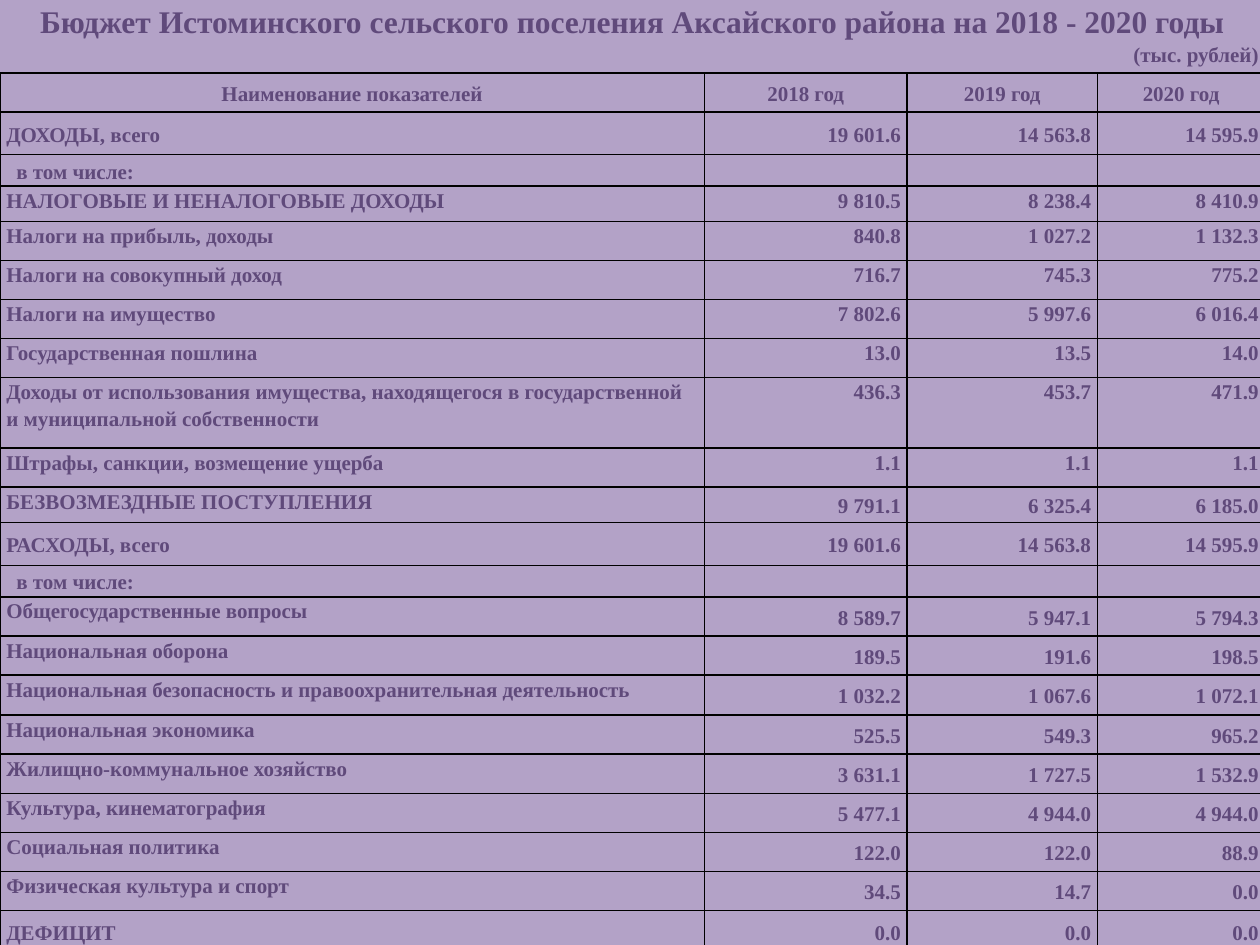
import pptx
import pptx.util
import pptx.dml.color
import pptx.enum.text
import lxml.etree
from pptx.util import Inches
from pptx.oxml.ns import qn

LILAC = pptx.dml.color.RGBColor(0xB3, 0xA2, 0xC7)
PURPLE = pptx.dml.color.RGBColor(0x60, 0x4A, 0x7B)
BLACK = pptx.dml.color.RGBColor(0, 0, 0)
ALIGN = pptx.enum.text.PP_ALIGN
ANCHOR = pptx.enum.text.MSO_ANCHOR

COLUMN_WIDTHS = [5.59, 1.61, 1.51, 1.33]
BUDGET = [
    (0.29, "Бюджет Истоминского сельского поселения Аксайского района на 2018 - 2020 годы", "", "", ""),
    (0.26, "", "", "", "(тыс. рублей)"),
    (0.31, "Наименование показателей", "2018 год", "2019 год", "2020 год"),
    (0.34, "ДОХОДЫ, всего", "19 601.6", "14 563.8", "14 595.9"),
    (0.25, "в том числе:", "", "", ""),
    (0.28, "НАЛОГОВЫЕ И НЕНАЛОГОВЫЕ ДОХОДЫ", "9 810.5", "8 238.4", "8 410.9"),
    (0.31, "Налоги на прибыль, доходы", "840.8", "1 027.2", "1 132.3"),
    (0.31, "Налоги на совокупный доход", "716.7", "745.3", "775.2"),
    (0.31, "Налоги на имущество", "7 802.6", "5 997.6", "6 016.4"),
    (0.31, "Государственная пошлина", "13.0", "13.5", "14.0"),
    (0.56, "Доходы от использования имущества, находящегося в государственной и муниципальной собственности",
     "436.3", "453.7", "471.9"),
    (0.31, "Штрафы, санкции, возмещение ущерба", "1.1", "1.1", "1.1"),
    (0.28, "БЕЗВОЗМЕЗДНЫЕ ПОСТУПЛЕНИЯ", "9 791.1", "6 325.4", "6 185.0"),
    (0.34, "РАСХОДЫ, всего", "19 601.6", "14 563.8", "14 595.9"),
    (0.25, "в том числе:", "", "", ""),
    (0.31, "Общегосударственные вопросы", "8 589.7", "5 947.1", "5 794.3"),
    (0.31, "Национальная оборона", "189.5", "191.6", "198.5"),
    (0.32, "Национальная безопасность и правоохранительная деятельность", "1 032.2", "1 067.6", "1 072.1"),
    (0.31, "Национальная экономика", "525.5", "549.3", "965.2"),
    (0.31, "Жилищно-коммунальное хозяйство", "3 631.1", "1 727.5", "1 532.9"),
    (0.31, "Культура, кинематография", "5 477.1", "4 944.0", "4 944.0"),
    (0.31, "Социальная политика", "122.0", "122.0", "88.9"),
    (0.31, "Физическая культура и спорт", "34.5", "14.7", "0.0"),
    (0.34, "ДЕФИЦИТ", "0.0", "0.0", "0.0"),
]
TITLE_ROW, UNIT_ROW, HEADER_ROW = 0, 1, 2
SUBHEADING_ROWS = {4, 14}
MIDDLE_ROWS = {2, 3, 4, 13, 14, 23}
FIRST_MIDDLE_VALUE_ROW = 12


def set_borders(cell, visible_sides):
    properties = cell._tc.get_or_add_tcPr()
    for side in ("lnL", "lnR", "lnT", "lnB"):
        line = lxml.etree.SubElement(properties, qn("a:" + side), w="12700")
        if side in visible_sides:
            fill = lxml.etree.SubElement(line, qn("a:solidFill"))
            lxml.etree.SubElement(fill, qn("a:srgbClr"), val=str(BLACK))
        else:
            lxml.etree.SubElement(line, qn("a:noFill"))


deck = pptx.Presentation()
deck.slide_width = Inches(10)
deck.slide_height = Inches(7.5)
page = deck.slides.add_slide(deck.slide_layouts[6])

frame = page.shapes.add_table(
    len(BUDGET), len(COLUMN_WIDTHS), Inches(0), Inches(0),
    Inches(sum(COLUMN_WIDTHS)), Inches(sum(row[0] for row in BUDGET)))
table = frame.table
table.first_row = False
table.horz_banding = False
for column, width in zip(table.columns, COLUMN_WIDTHS):
    column.width = Inches(width)

for row_index, (height, *texts) in enumerate(BUDGET):
    table.rows[row_index].height = Inches(height)
    for column_index, text in enumerate(texts):
        cell = table.cell(row_index, column_index)
        is_label = column_index == 0

        if row_index == TITLE_ROW:
            set_borders(cell, ())
            anchor = ANCHOR.BOTTOM
        elif row_index == UNIT_ROW:
            set_borders(cell, ("lnB",))
            anchor = ANCHOR.TOP
        else:
            set_borders(cell, ("lnL", "lnR", "lnT", "lnB"))
            middle = row_index in MIDDLE_ROWS or (
                not is_label and row_index >= FIRST_MIDDLE_VALUE_ROW)
            anchor = ANCHOR.MIDDLE if middle else ANCHOR.TOP
        cell.fill.solid()
        cell.fill.fore_color.rgb = LILAC

        indented = is_label and row_index in SUBHEADING_ROWS
        cell_format = {
            "margin_left": Inches(0.13 if indented else 0.05),
            "margin_right": Inches(0.05),
            "margin_top": 0,
            "margin_bottom": 0,
            "vertical_anchor": anchor,
        }
        for name, value in cell_format.items():
            setattr(cell, name, value)

        para = cell.text_frame.paragraphs[0]
        para.line_spacing = 1.15
        if row_index in (TITLE_ROW, HEADER_ROW):
            para.alignment = ALIGN.CENTER
        else:
            para.alignment = ALIGN.LEFT if is_label else ALIGN.RIGHT

        if text:
            span = para.add_run()
            span.text = text
            span.font.color.rgb = PURPLE
            font_format = {
                "name": "Times New Roman",
                "size": pptx.util.Pt(18 if row_index == TITLE_ROW else 12),
                "bold": True,
            }
            for name, value in font_format.items():
                setattr(span.font, name, value)
        else:
            lxml.etree.SubElement(para._p, qn("a:endParaRPr"), sz="1200")

table.cell(TITLE_ROW, 0).merge(table.cell(TITLE_ROW, len(COLUMN_WIDTHS) - 1))

deck.save("out.pptx")
